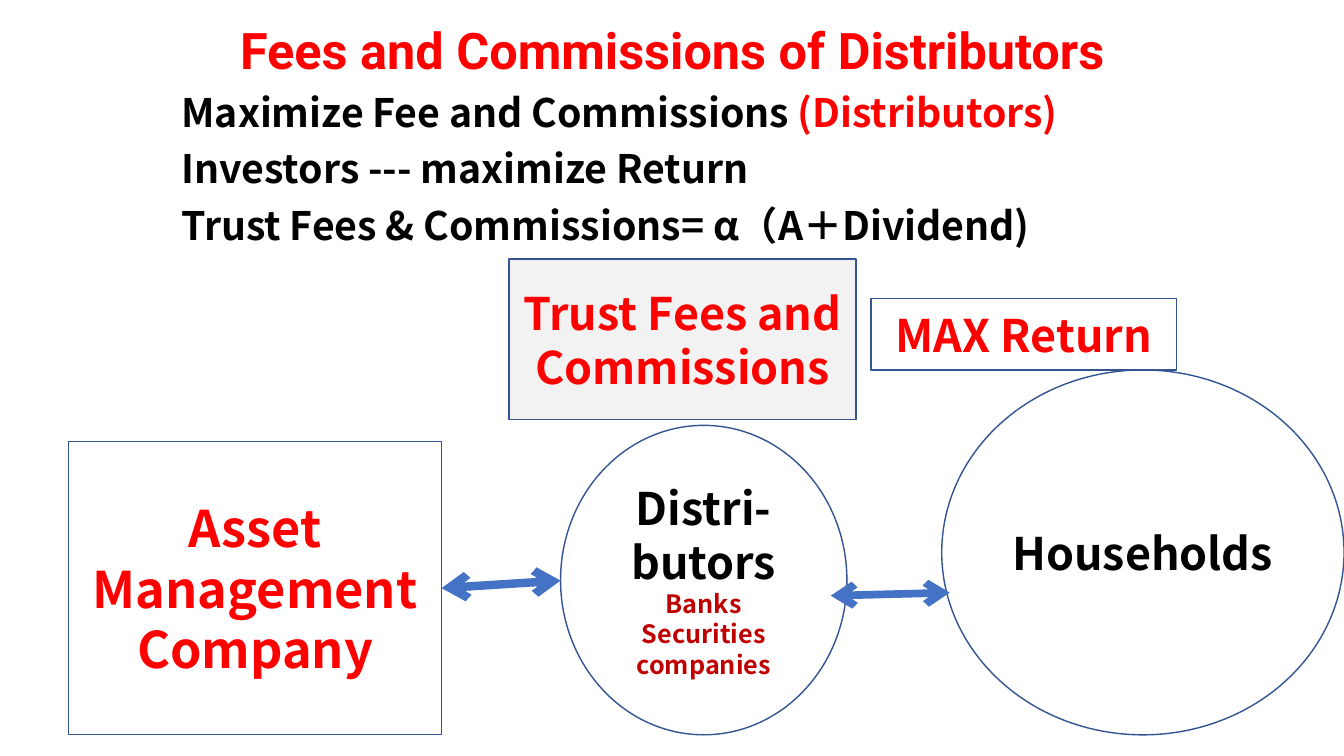
from lxml import etree
from pptx import Presentation
from pptx.dml.color import RGBColor
from pptx.enum.shapes import MSO_CONNECTOR, MSO_SHAPE
from pptx.enum.text import MSO_ANCHOR, MSO_AUTO_SIZE, PP_ALIGN
from pptx.oxml.ns import qn
from pptx.util import Inches, Pt

RED = RGBColor(0xFF, 0x00, 0x00)
DARK_RED = RGBColor(0xC0, 0x00, 0x00)
BLACK = RGBColor(0x00, 0x00, 0x00)
WHITE = RGBColor(0xFF, 0xFF, 0xFF)
GREY = RGBColor(0xF2, 0xF2, 0xF2)
OUTLINE = RGBColor(0x32, 0x54, 0x91)
ARROW = RGBColor(0x44, 0x72, 0xC4)
TITLE_FONT = "Roboto"
BODY_FONT = "Noto Sans CJK JP"


def add_run(p, text, size, color, font=BODY_FONT):
    r = p.add_run()
    r.text = text
    formats = {"name": font, "size": Pt(size), "bold": True}
    for name, value in formats.items():
        setattr(r.font, name, value)
    r.font.color.rgb = color
    # East Asian face for the full-width characters
    etree.SubElement(r.font._element, qn("a:ea"), typeface=font)


def write(tf, paragraphs, **formats):
    """Each paragraph is a list of (text, size, colour, ...) runs."""
    for i, runs in enumerate(paragraphs):
        p = tf.paragraphs[0] if i == 0 else tf.add_paragraph()
        for name, value in formats.items():
            setattr(p, name, value)
        if i == 0:
            p.space_before = Pt(0)
        for run in runs:
            add_run(p, *run)


def place(sp, left, top, width, height):
    box = {"left": left, "top": top, "width": width, "height": height}
    for name, value in box.items():
        setattr(sp, name, Inches(value))


def fill_placeholder(sp, box, anchor, paragraphs, **formats):
    place(sp, *box)
    tf = sp.text_frame
    tf.auto_size = MSO_AUTO_SIZE.NONE
    tf.vertical_anchor = anchor
    write(tf, paragraphs, line_spacing=0.9, **formats)


def remove_bullets(tf):
    for p in tf.paragraphs:
        pPr = p._p.get_or_add_pPr()
        pPr.set("marL", "0")
        pPr.set("indent", "0")
        etree.SubElement(pPr, qn("a:buNone"))


def add_box(s, kind, box, paragraphs, fill=WHITE):
    sp = s.shapes.add_shape(kind, *map(Inches, box))
    sp.shadow.inherit = False
    if fill is None:
        sp.fill.background()
    else:
        sp.fill.solid()
        sp.fill.fore_color.rgb = fill
    sp.line.color.rgb = OUTLINE
    sp.line.width = Pt(1)
    tf = sp.text_frame
    tf.word_wrap = True
    tf.vertical_anchor = MSO_ANCHOR.MIDDLE
    write(tf, paragraphs, alignment=PP_ALIGN.CENTER)
    return sp


def add_double_arrow(s, start, end, width):
    line = s.shapes.add_connector(
        MSO_CONNECTOR.STRAIGHT, *map(Inches, start + end))
    line.line.color.rgb = ARROW
    line.line.width = Pt(width)
    ln = line.line._get_or_add_ln()
    for tag in ("a:headEnd", "a:tailEnd"):
        etree.SubElement(ln, qn(tag), type="arrow")
    etree.SubElement(line._element.spPr, qn("a:effectLst"))
    return line


def main():
    prs = Presentation()
    prs.slide_width, prs.slide_height = Inches(13.33), Inches(7.5)
    s = prs.slides.add_slide(prs.slide_layouts[1])
    title, body = s.placeholders

    # Title and statements
    fill_placeholder(
        title, (1.67, 0.13, 10, 0.79), MSO_ANCHOR.MIDDLE,
        [[("Fees and Commissions of Distributors", 36, RED, TITLE_FONT)]],
        alignment=PP_ALIGN.CENTER)
    fill_placeholder(
        body, (1.7, 0.88, 9.96, 5.9), MSO_ANCHOR.TOP,
        [[("Maximize Fee and Commissions ", 28, BLACK),
          ("(Distributors)", 28, RED)],
         [("Investors --- maximize Return", 28, BLACK)],
         [("Trust Fees & Commissions= α（A＋Dividend)", 28, BLACK)]],
        alignment=PP_ALIGN.LEFT, space_before=Pt(10))
    remove_bullets(body.text_frame)

    # Parties
    add_box(s, MSO_SHAPE.OVAL, (9.34, 3.67, 3.99, 3.62),
            [[("Households", 32, BLACK)]])
    add_box(s, MSO_SHAPE.OVAL, (5.56, 4.22, 2.84, 3.07),
            [[("Distri-butors", 32, BLACK)],
             [("Banks", 18, DARK_RED)],
             [("Securities companies", 18, DARK_RED)]])
    company = add_box(s, MSO_SHAPE.RECTANGLE, (0.68, 4.38, 3.7, 2.91),
                      [[("Asset Management", 36, RED)],
                       [("Company", 36, RED)]])

    # Links between the parties
    add_double_arrow(s, (8.24, 5.91), (9.42, 5.88), 5.5)
    link = add_double_arrow(s, (4.38, 5.8), (5.56, 5.76), 6)
    link.begin_connect(company, 3)

    # Goals
    add_box(s, MSO_SHAPE.RECTANGLE, (5.05, 2.57, 3.44, 1.59),
            [[("Trust Fees and", 32, RED)], [("Commissions", 32, RED)]], GREY)
    add_box(s, MSO_SHAPE.RECTANGLE, (8.64, 2.96, 3.03, 0.71),
            [[("MAX Return", 32, RED)]], None)

    prs.save("out.pptx")


if __name__ == "__main__":
    main()
